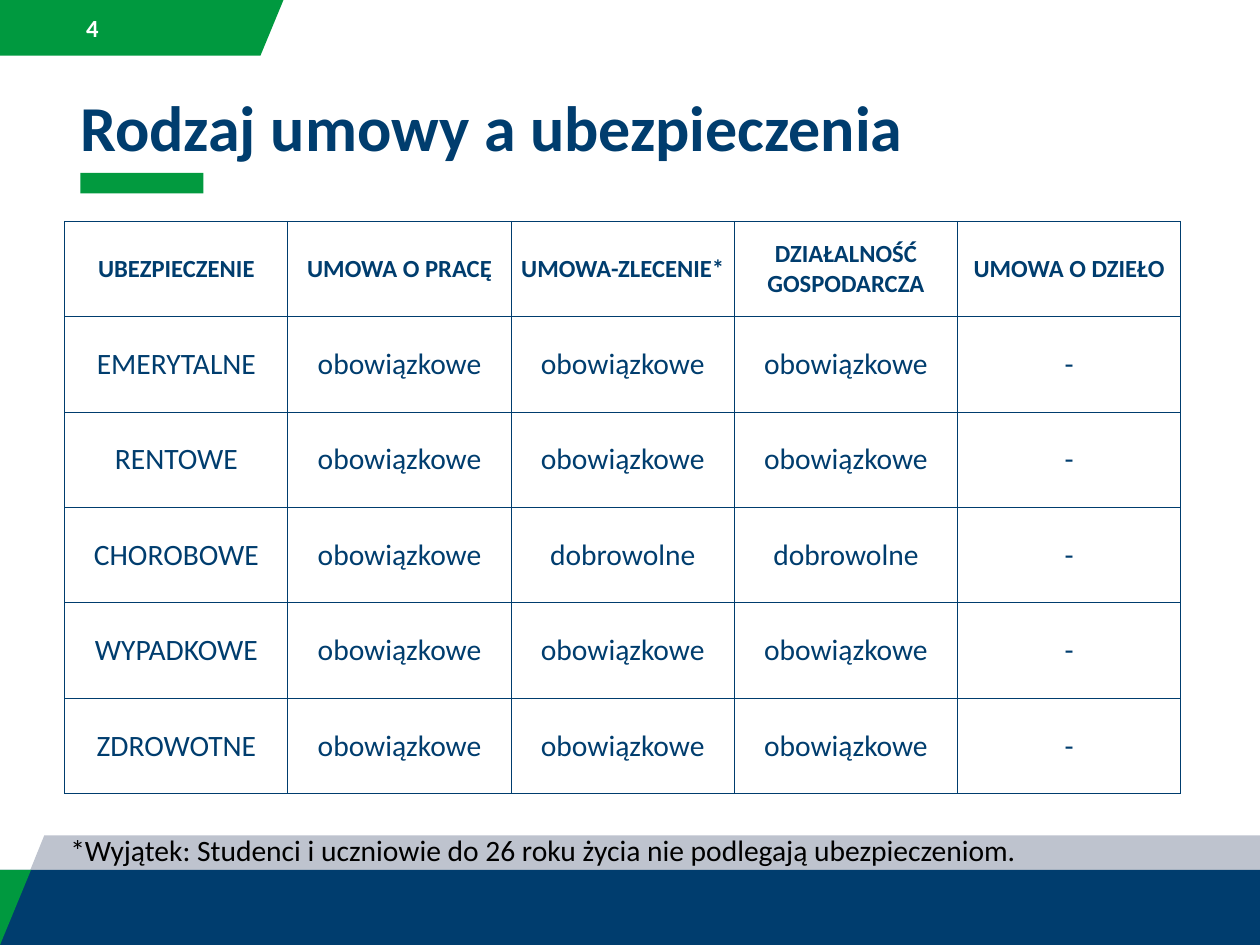
from dataclasses import dataclass

from lxml import etree
from pptx import Presentation
from pptx.dml.color import RGBColor
from pptx.enum.shapes import MSO_SHAPE
from pptx.enum.text import MSO_ANCHOR, PP_ALIGN
from pptx.oxml.ns import qn
from pptx.util import Pt

RECTANGLE = MSO_SHAPE.RECTANGLE
TOP, MIDDLE = MSO_ANCHOR.TOP, MSO_ANCHOR.MIDDLE
LEFT, CENTER = PP_ALIGN.LEFT, PP_ALIGN.CENTER


@dataclass(frozen=True)
class Theme:
    font: str = "Calibri"
    navy: str = "003D6E"
    green: str = "00993F"
    accent: str = "029A3F"
    gray: str = "BEC3CE"
    white: str = "FFFFFF"
    black: str = "000000"
    title_size: int = 52
    body_size: int = 24
    small_size: int = 20
    border_width: int = 1


THEME = Theme()
WIDTH, HEIGHT = 1024, 768

HEADERS = ["UBEZPIECZENIE", "UMOWA O PRACĘ", "UMOWA-ZLECENIE*",
           "DZIAŁALNOŚĆ GOSPODARCZA", "UMOWA O DZIEŁO"]
REQUIRED, VOLUNTARY, NONE = "obowiązkowe", "dobrowolne", "-"
INSURANCE_ROWS = [
    ["EMERYTALNE", REQUIRED, REQUIRED, REQUIRED, NONE],
    ["RENTOWE", REQUIRED, REQUIRED, REQUIRED, NONE],
    ["CHOROBOWE", REQUIRED, VOLUNTARY, VOLUNTARY, NONE],
    ["WYPADKOWE", REQUIRED, REQUIRED, REQUIRED, NONE],
    ["ZDROWOTNE", REQUIRED, REQUIRED, REQUIRED, NONE],
]


def paint(shape, color):
    shape.shadow.inherit = False
    shape.fill.solid()
    shape.fill.fore_color.rgb = RGBColor.from_string(color)
    shape.line.fill.background()


def add_rectangle(slide, box, color):
    paint(slide.shapes.add_shape(RECTANGLE, *map(Pt, box)), color)


def add_polygon(slide, points, color):
    start, *others = [(Pt(x), Pt(y)) for x, y in points]
    builder = slide.shapes.build_freeform(*start)
    builder.add_line_segments(others, close=True)
    paint(builder.convert_to_shape(), color)


def write(text_frame, text, size, color, bold=False, align=LEFT):
    paragraph = text_frame.paragraphs[0]
    paragraph.alignment = align
    run = paragraph.add_run()
    run.text = text
    run.font.name = THEME.font
    run.font.size = Pt(size)
    run.font.bold = bold
    run.font.color.rgb = RGBColor.from_string(color)


def add_text(slide, box, text, size, color, bold=False, anchor=MIDDLE, inset=4.5):
    text_frame = slide.shapes.add_textbox(*map(Pt, box)).text_frame
    text_frame.word_wrap = True
    text_frame.vertical_anchor = anchor
    text_frame.margin_left = text_frame.margin_right = Pt(inset)
    text_frame.margin_top = text_frame.margin_bottom = Pt(min(inset, 4.5))
    write(text_frame, text, size, color, bold)


def set_borders(cell):
    properties = cell._tc.get_or_add_tcPr()
    for position, side in enumerate(("a:lnL", "a:lnR", "a:lnT", "a:lnB")):
        line = etree.Element(qn(side), w=str(Pt(THEME.border_width)))
        fill = etree.SubElement(line, qn("a:solidFill"))
        etree.SubElement(fill, qn("a:srgbClr"), val=THEME.navy)
        properties.insert(position, line)


def add_page_tab(slide, box, number):
    left, top, width, height = box
    right, bottom = left + width, top + height
    add_polygon(slide, [(left, top), (right, top), (right - 18.7, bottom), (left, bottom)],
                THEME.green)
    add_text(slide, (left + 65.5, top + 6.5, 61, 32.4), number,
             THEME.small_size, THEME.white, bold=True)


def add_title(slide, box, title):
    left, top, width, height = box
    add_text(slide, box, title, THEME.title_size, THEME.navy, bold=True, anchor=TOP, inset=7.2)
    # Accent bar under the title
    add_rectangle(slide, (left + 7.2, top + height + 6.5, 100, 16.7), THEME.accent)


def add_insurance_table(slide, box):
    rows = [HEADERS] + INSURANCE_ROWS
    table = slide.shapes.add_table(len(rows), len(HEADERS), *map(Pt, box)).table
    table.first_row = table.horz_banding = False
    for column in table.columns:
        column.width = Pt(box[2] / len(HEADERS))
    for row_index, values in enumerate(rows):
        table.rows[row_index].height = Pt(box[3] / len(rows))
        is_header = row_index == 0
        size = THEME.small_size if is_header else THEME.body_size
        for column_index, value in enumerate(values):
            cell = table.cell(row_index, column_index)
            cell.fill.background()
            cell.vertical_anchor = MIDDLE
            cell.margin_left = cell.margin_right = Pt(6)
            set_borders(cell)
            write(cell.text_frame, value, size, THEME.navy, is_header, CENTER)


def add_footer(slide, box, note):
    left, top, width, height = box
    right, bottom = left + width, top + height
    band_top = top + 28
    # Slanted gray band, navy strip and green corner
    add_polygon(slide, [(left, bottom), (left + 36, top), (right, top), (right, bottom)],
                THEME.gray)
    add_rectangle(slide, (left, band_top, width, bottom - band_top), THEME.navy)
    add_polygon(slide, [(left, band_top), (left, bottom), (left + 25.2, band_top)], THEME.green)
    # Footnote to the table
    add_text(slide, (left + 52.6, top - 7.2, width - 52.6, 37.4), note,
             THEME.body_size, THEME.black)


def main():
    presentation = Presentation()
    presentation.slide_width, presentation.slide_height = Pt(WIDTH), Pt(HEIGHT)
    slide = presentation.slides.add_slide(presentation.slide_layouts[6])
    add_page_tab(slide, (0, 0, 230.4, 45.2), "4")
    add_title(slide, (58.2, 67, 907, 67), "Rodzaj umowy a ubezpieczenia")
    add_insurance_table(slide, (52.6, 180, 907, 465))
    add_footer(slide, (0, 679, WIDTH, HEIGHT - 679),
               "*Wyjątek: Studenci i uczniowie do 26 roku życia nie podlegają ubezpieczeniom.")
    presentation.save("out.pptx")


if __name__ == "__main__":
    main()
